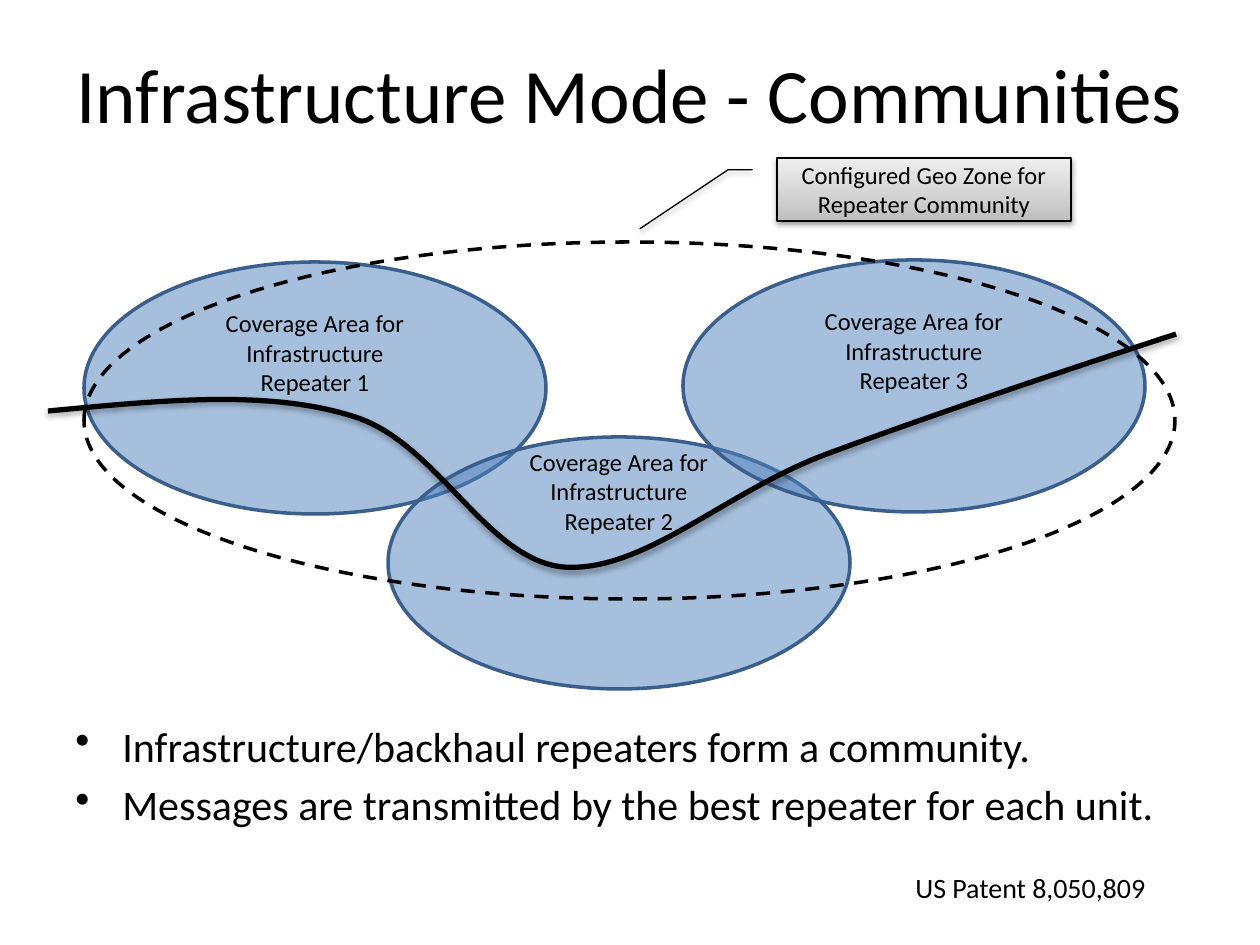
from lxml import etree
from pptx import Presentation
from pptx.dml.color import RGBColor
from pptx.enum.dml import MSO_LINE
from pptx.enum.shapes import MSO_SHAPE
from pptx.enum.text import MSO_ANCHOR, PP_ALIGN
from pptx.oxml.ns import qn
from pptx.util import Emu, Pt

OVAL = MSO_SHAPE.OVAL
CALLOUT = MSO_SHAPE.LINE_CALLOUT_2
DASH = MSO_LINE.DASH
MID, TOP = MSO_ANCHOR.MIDDLE, MSO_ANCHOR.TOP
LEFT, CENTER = PP_ALIGN.LEFT, PP_ALIGN.CENTER
SCALE = 914400 / 126
BLACK = "000000"


def px(n):
    return Emu(round(n * SCALE))


def rgb(code):
    return RGBColor.from_string(code)


def add(node, tag, **attrs):
    return etree.SubElement(node, qn(tag), {k: str(v) for k, v in attrs.items()})


class Board:
    """Holds the style and the current slide, and draws each kind of element."""

    def __init__(self, deck, font, ink):
        self.slide = deck.slides.add_slide(deck.slide_layouts[6])
        self.shapes = self.slide.shapes
        self.font, self.ink = font, ink

    def label(self, shape, lines, size, align=CENTER, anchor=MID):
        frame = shape.text_frame
        frame.word_wrap = True
        frame.vertical_anchor = anchor
        frame.text = "\n".join(lines)
        for para in frame.paragraphs:
            para.alignment = align
            para.font.name, para.font.size = self.font, Pt(size)
            para.font.color.rgb = rgb(self.ink)
        return frame

    def text(self, box, lines, size, align=LEFT, anchor=TOP):
        shape = self.shapes.add_textbox(*map(px, box))
        return self.label(shape, lines, size, align, anchor)

    def bullets(self, box, lines, size):
        for para in self.text(box, lines, size).paragraphs:
            para.space_before = Pt(size * 0.2)
            props = para._p.get_or_add_pPr()
            props.set("marL", str(px(47)))
            props.set("indent", str(px(-47)))
            mark = etree.Element(qn("a:buChar"), char="•")
            props.find(qn("a:defRPr")).addprevious(mark)

    def edge(self, shape, color, width):
        shape.shadow.inherit = False
        shape.line.color.rgb = rgb(color)
        shape.line.width = Pt(width)

    def shade(self, shape, alpha, dist):
        drop = add(shape._element.spPr.find(qn("a:effectLst")), "a:outerShdw",
                   blurRad=40000, dist=dist, dir=5400000, rotWithShape=0)
        tint = add(drop, "a:srgbClr", val=BLACK)
        add(tint, "a:alpha", val=alpha * 1000)

    def area(self, left, top, name, base):
        shape = self.shapes.add_shape(OVAL, *map(px, (left, top, 462, 252)))
        shape.fill.solid()
        shape.fill.fore_color.rgb = rgb("4F81BD")
        tint = shape._element.spPr.find(qn("a:solidFill"))[0]
        add(tint, "a:alpha", val=50000)
        self.edge(shape, "3A5F8C", 2)
        lines = ["Coverage Area for Infrastructure", name]
        self.label(shape, lines, 14).margin_bottom = px(base)

    def zone(self, box):
        shape = self.shapes.add_shape(OVAL, *map(px, box))
        shape.fill.background()
        self.edge(shape, self.ink, 2)
        shape.line.dash_style = DASH

    def curve(self, start, bends):
        ends = [bend[-1] for bend in bends]
        pen = self.shapes.build_freeform(*start, scale=SCALE)
        pen.add_line_segments(ends, close=False)
        shape = pen.convert_to_shape()
        left = min(x for x, y in [start, *ends])
        top = min(y for x, y in [start, *ends])
        steps = list(shape._element.spPr.iter(qn("a:lnTo")))
        for step, bend in zip(steps, bends):
            arc = etree.Element(qn("a:cubicBezTo"))
            for x, y in bend:
                add(arc, "a:pt", x=x - left, y=y - top)
            step.getparent().replace(step, arc)
        shape.fill.background()
        self.edge(shape, self.ink, 3)
        self.shade(shape, 35, 23000)

    def callout(self, box, lines, stops):
        shape = self.shapes.add_shape(CALLOUT, *map(px, box))
        shape.fill.gradient()
        shape.fill.gradient_angle = 90
        ramp = next(shape._element.spPr.iter(qn("a:gsLst")))
        for old in list(ramp):
            ramp.remove(old)
        for place, color in stops:
            stop = add(ramp, "a:gs", pos=place * 1000)
            add(stop, "a:srgbClr", val=color)
        self.edge(shape, self.ink, 0.75)
        self.shade(shape, 38, 20000)
        self.label(shape, lines, 14)


def main():
    deck = Presentation()
    deck.slide_width, deck.slide_height = px(1260), px(945)
    board = Board(deck, "Calibri", BLACK)
    board.text((63, 38, 1134, 110), ["Infrastructure Mode - Communities"],
               44, CENTER, MID)
    areas = [(84, 262, 77), (388, 437, 150), (683, 260, 77)]
    for count, (left, top, base) in enumerate(areas, 1):
        board.area(left, top, f"Repeater {count}", base)
    board.curve((48, 411), [
        [(156, 401), (266, 389), (352, 416)],
        [(437, 441), (485, 559), (563, 567)],
        [(643, 573), (722, 494), (824, 455)],
        [(926, 417), (1051, 375), (1176, 334)],
    ])
    board.zone((84, 242, 1091, 357))
    board.bullets((63, 714, 1134, 179), [
        "Infrastructure/backhaul repeaters form a community.",
        "Messages are transmitted by the best repeater for each unit.",
    ], 24)
    board.text((903, 864, 273, 47), ["US Patent 8,050,809"], 16)
    board.callout((777, 158, 294, 63),
                  ["Configured Geo Zone for Repeater Community"],
                  [(0, "BDBDBD"), (35, "D1D1D1"), (100, "EEEEEE")])
    deck.save("out.pptx")


if __name__ == "__main__":
    main()
